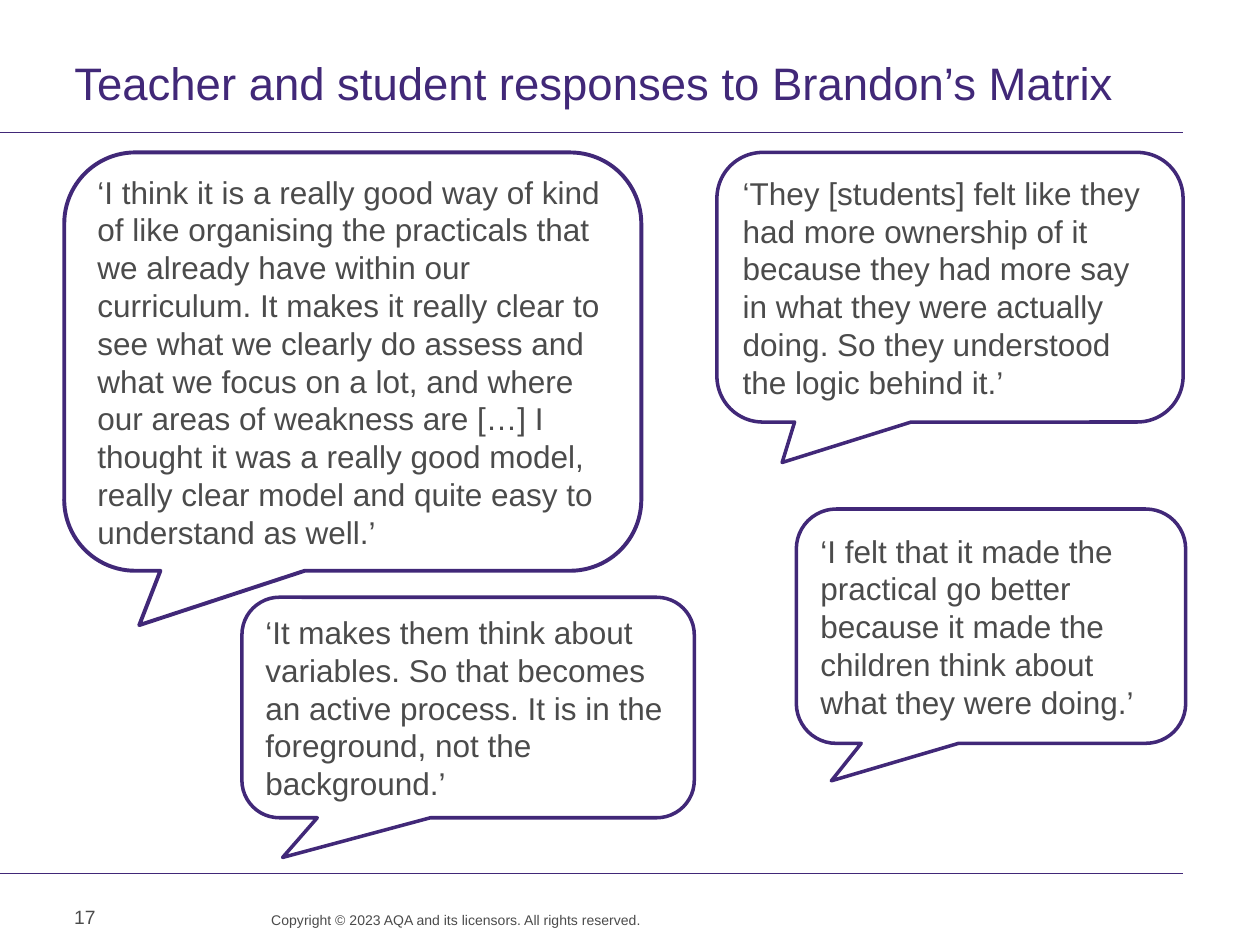
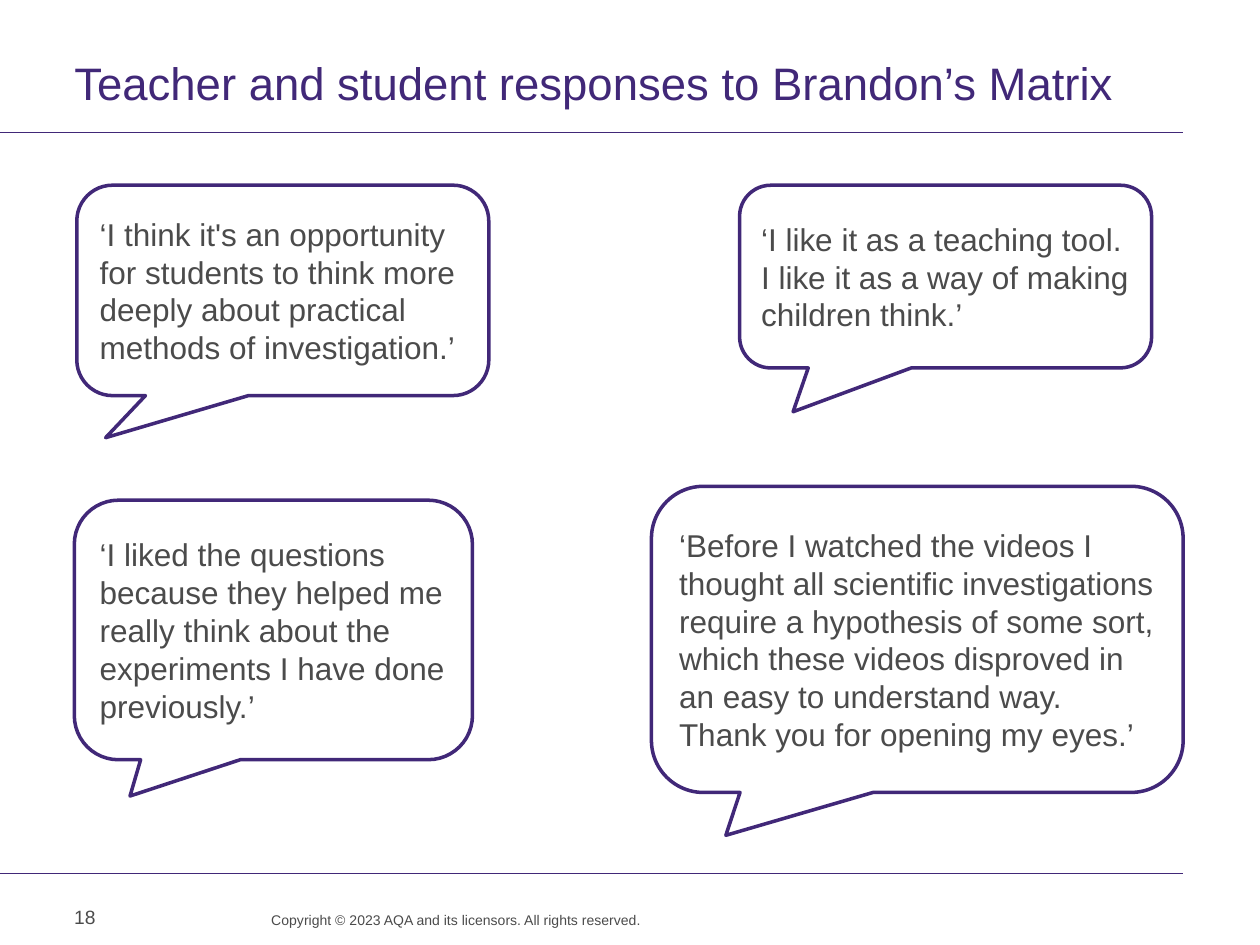
from dataclasses import dataclass

from lxml.etree import SubElement
from pptx import Presentation
from pptx.dml.color import RGBColor
from pptx.enum.shapes import MSO_CONNECTOR, MSO_SHAPE
from pptx.enum.text import MSO_ANCHOR, MSO_AUTO_SIZE, PP_ALIGN
from pptx.oxml.ns import qn
from pptx.util import Emu, Pt

PX = 9144  # 100 px to the inch


@dataclass(frozen=True)
class Theme:
    font: str = "Arial"
    purple: RGBColor = RGBColor(0x41, 0x28, 0x78)
    grey: RGBColor = RGBColor(0x4B, 0x4B, 0x4B)
    title_size: int = 26
    quote_size: int = 18
    number_size: int = 11
    copyright_size: int = 8
    rule_width: float = 0.6
    bubble_width: float = 2
    corner: float = 0.17


TITLE = "Teacher and student responses to Brandon’s Matrix"
COPYRIGHT = "Copyright © 2023 AQA and its licensors. All rights reserved."
FIRST_NUMBER = 17
RULE_RIGHT = 939
RULE_TOPS = (105, 693)

# Each bubble: box (left, top, width, height), tail tip from the centre as
# a share of width and height, quote, and optionally an outline width
SLIDES = [
    [
        ((51, 121, 458, 332), (-0.37, 0.63),
         "‘I think it is a really good way of kind of like organising the "
         "practicals that we already have within our curriculum. It makes it "
         "really clear to see what we clearly do assess and what we focus on "
         "a lot, and where our areas of weakness are […] I thought it was a "
         "really good model, really clear model and quite easy to understand "
         "as well.’", 2.25),
        ((632, 404, 309, 186), (-0.41, 0.66),
         "‘I felt that it made the practical go better because it made the "
         "children think about what they were doing.’"),
        ((569, 121, 370, 214), (-0.36, 0.65),
         "‘They [students] felt like they had more ownership of it because "
         "they had more say in what they were actually doing. So they "
         "understood the logic behind it.’"),
        ((192, 474, 359, 175), (-0.41, 0.68),
         "‘It makes them think about variables. So that becomes an active "
         "process. It is in the foreground, not the background.’"),
    ],
    [
        ((59, 397, 316, 206), (-0.36, 0.64),
         "‘I liked the questions because they helped me really think about "
         "the experiments I have done previously.’"),
        ((517, 386, 422, 243), (-0.36, 0.64),
         "‘Before I watched the videos I thought all scientific "
         "investigations require a hypothesis of some sort, which these "
         "videos disproved in an easy to understand way. Thank you for "
         "opening my eyes.’"),
        ((61, 147, 327, 167), (-0.43, 0.7),
         "‘I think it's an opportunity for students to think more deeply "
         "about practical methods of investigation.’"),
        ((587, 147, 327, 145), (-0.37, 0.74),
         "‘I like it as a teaching tool. I like it as a way of making "
         "children think.’"),
    ],
]


class Deck:
    def __init__(self, theme):
        self.theme = theme
        self.prs = Presentation()
        self.prs.slide_width, self.prs.slide_height = self.emu(1000, 750)
        self.slide = None

    def emu(self, *lengths):
        return [Emu(n * PX) for n in lengths]

    def set_text(self, tf, text, size, color, align=PP_ALIGN.LEFT,
                 anchor=MSO_ANCHOR.TOP, leading=None, insets=None):
        tf.word_wrap = True
        tf.auto_size = MSO_AUTO_SIZE.NONE
        tf.vertical_anchor = anchor
        if insets:
            (tf.margin_left, tf.margin_top,
             tf.margin_right, tf.margin_bottom) = self.emu(*insets)
        p = tf.paragraphs[0]
        p.text = text
        p.alignment = align
        if leading:
            p.line_spacing = Pt(leading)
        p.font.name = self.theme.font
        p.font.size = Pt(size)
        p.font.color.rgb = color

    def title(self, text):
        sp = self.slide.shapes.title
        sp.left, sp.top, sp.width, sp.height = self.emu(59, 48, 880, 47)
        self.set_text(sp.text_frame, text, self.theme.title_size,
                      self.theme.purple, leading=28, insets=(0, 0, 10, 0))

    def rule(self, top):
        line = self.slide.shapes.add_connector(
            MSO_CONNECTOR.STRAIGHT, *self.emu(0, top, RULE_RIGHT, top))
        line.line.color.rgb = self.theme.purple
        line.line.width = Pt(self.theme.rule_width)
        SubElement(line._element.spPr, qn("a:effectLst"))

    def label(self, box, text, size, **style):
        sp = self.slide.shapes.add_textbox(*self.emu(*box))
        self.set_text(sp.text_frame, text, size, self.theme.grey, **style)

    def bubble(self, box, tail, quote, width=None):
        sp = self.slide.shapes.add_shape(
            MSO_SHAPE.ROUNDED_RECTANGULAR_CALLOUT, *self.emu(*box))
        for i, value in enumerate((*tail, self.theme.corner)):
            sp.adjustments[i] = value
        sp.shadow.inherit = False
        sp.fill.background()
        sp.line.color.rgb = self.theme.purple
        sp.line.width = Pt(width or self.theme.bubble_width)
        self.set_text(sp.text_frame, quote, self.theme.quote_size,
                      self.theme.grey, anchor=MSO_ANCHOR.MIDDLE)

    def new_slide(self, number):
        # Title Only layout, with the rules and footer every slide shares
        self.slide = self.prs.slides.add_slide(self.prs.slide_layouts[5])
        for top in RULE_TOPS:
            self.rule(top)
        self.title(TITLE)
        self.label((167, 723, 342, 26), COPYRIGHT, self.theme.copyright_size,
                   align=PP_ALIGN.RIGHT, leading=10, insets=(0, 0, 0, 0))
        self.label((49, 708, 76, 40), str(number), self.theme.number_size,
                   anchor=MSO_ANCHOR.MIDDLE)


def main():
    deck = Deck(Theme())
    for number, bubbles in enumerate(SLIDES, FIRST_NUMBER):
        deck.new_slide(number)
        for bubble in bubbles:
            deck.bubble(*bubble)
    deck.prs.save("out.pptx")


if __name__ == "__main__":
    main()
